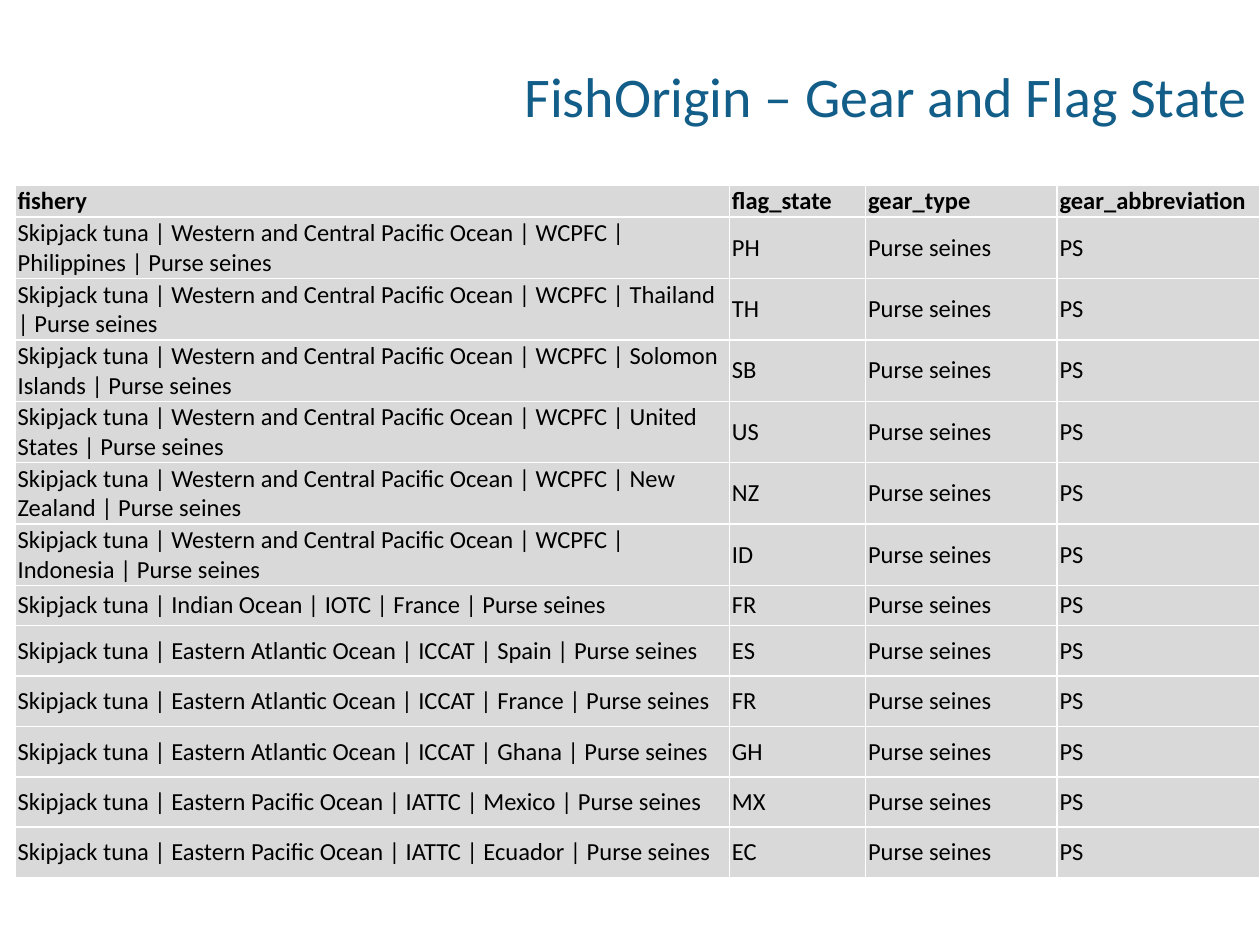
from typing import NamedTuple

from pptx import Presentation
from pptx.dml.color import RGBColor
from pptx.enum.text import MSO_ANCHOR, PP_ALIGN
from pptx.util import Inches, Pt


class Fishery(NamedTuple):
    ocean: str
    body: str
    country: str
    flag: str
    height: float


class TextStyle(NamedTuple):
    size: int
    color: str
    bold: bool = False


WESTERN_PACIFIC = "Western and Central Pacific Ocean"
EASTERN_ATLANTIC = "Eastern Atlantic Ocean"
EASTERN_PACIFIC = "Eastern Pacific Ocean"
GEAR = "Purse seines"
GEAR_CODE = "PS"
HEADINGS = ("fishery", "flag_state", "gear_type", "gear_abbreviation")
COLUMN_WIDTHS = (5.67, 1.08, 1.52, 1.61)
HEADER_HEIGHT = 0.1
TITLE_STYLE = TextStyle(32, "125E89")
HEADER_STYLE = TextStyle(14, "000000", True)
BODY_STYLE = TextStyle(14, "000000")

FISHERIES = (
    Fishery(WESTERN_PACIFIC, "WCPFC", "Philippines", "PH", 0.47),
    Fishery(WESTERN_PACIFIC, "WCPFC", "Thailand", "TH", 0.47),
    Fishery(WESTERN_PACIFIC, "WCPFC", "Solomon Islands", "SB", 0.47),
    Fishery(WESTERN_PACIFIC, "WCPFC", "United States", "US", 0.47),
    Fishery(WESTERN_PACIFIC, "WCPFC", "New Zealand", "NZ", 0.47),
    Fishery(WESTERN_PACIFIC, "WCPFC", "Indonesia", "ID", 0.47),
    Fishery("Indian Ocean", "IOTC", "France", "FR", 0.32),
    Fishery(EASTERN_ATLANTIC, "ICCAT", "Spain", "ES", 0.4),
    Fishery(EASTERN_ATLANTIC, "ICCAT", "France", "FR", 0.4),
    Fishery(EASTERN_ATLANTIC, "ICCAT", "Ghana", "GH", 0.4),
    Fishery(EASTERN_PACIFIC, "IATTC", "Mexico", "MX", 0.4),
    Fishery(EASTERN_PACIFIC, "IATTC", "Ecuador", "EC", 0.4),
)


def color(value: str) -> RGBColor:
    return RGBColor.from_string(value)


def add_span(para, text: str, style: TextStyle) -> None:
    span = para.add_run()
    span.text = text
    span.font.name = "Calibri"
    span.font.size = Pt(style.size)
    span.font.bold = style.bold
    span.font.color.rgb = color(style.color)


def add_title(page, text: str) -> None:
    box = page.shapes.add_textbox(Inches(2.83), Inches(0.13), Inches(7.17), Inches(1.25))
    frame = box.text_frame
    frame.word_wrap = True
    frame.vertical_anchor = MSO_ANCHOR.MIDDLE
    para = frame.paragraphs[0]
    para.alignment = PP_ALIGN.RIGHT
    add_span(para, text, TITLE_STYLE)


def fill_cell(cell, text: str, style: TextStyle) -> None:
    cell.fill.solid()
    cell.fill.fore_color.rgb = color("D9D9D9")
    cell.vertical_anchor = MSO_ANCHOR.MIDDLE
    cell.margin_left = cell.margin_right = Inches(0.02)
    cell.margin_top = cell.margin_bottom = Inches(0.01)
    add_span(cell.text_frame.paragraphs[0], text, style)


def fill_row(table, index: int, texts: tuple[str, ...], height: float, style: TextStyle) -> None:
    row = table.rows[index]
    row.height = Inches(height)
    for cell, text in zip(row.cells, texts):
        fill_cell(cell, text, style)


def add_fishery_table(page) -> None:
    holder = page.shapes.add_table(
        len(FISHERIES) + 1, len(HEADINGS), Inches(0.12), Inches(1.47), Inches(9.88), Inches(5.46)
    )
    table = holder.table
    for column, width in zip(table.columns, COLUMN_WIDTHS):
        column.width = Inches(width)
    fill_row(table, 0, HEADINGS, HEADER_HEIGHT, HEADER_STYLE)
    for index, fishery in enumerate(FISHERIES, start=1):
        name = " | ".join(("Skipjack tuna", fishery.ocean, fishery.body, fishery.country, GEAR))
        texts = (name, fishery.flag, GEAR, GEAR_CODE)
        fill_row(table, index, texts, fishery.height, BODY_STYLE)
    table.first_row = False
    table.horz_banding = False
    holder.height = Inches(5.46)


def main() -> None:
    deck = Presentation()
    deck.slide_width = Inches(10)
    deck.slide_height = Inches(7.5)
    page = deck.slides.add_slide(deck.slide_layouts[6])
    add_title(page, "FishOrigin – Gear and Flag State")
    add_fishery_table(page)
    deck.save("out.pptx")


if __name__ == "__main__":
    main()
